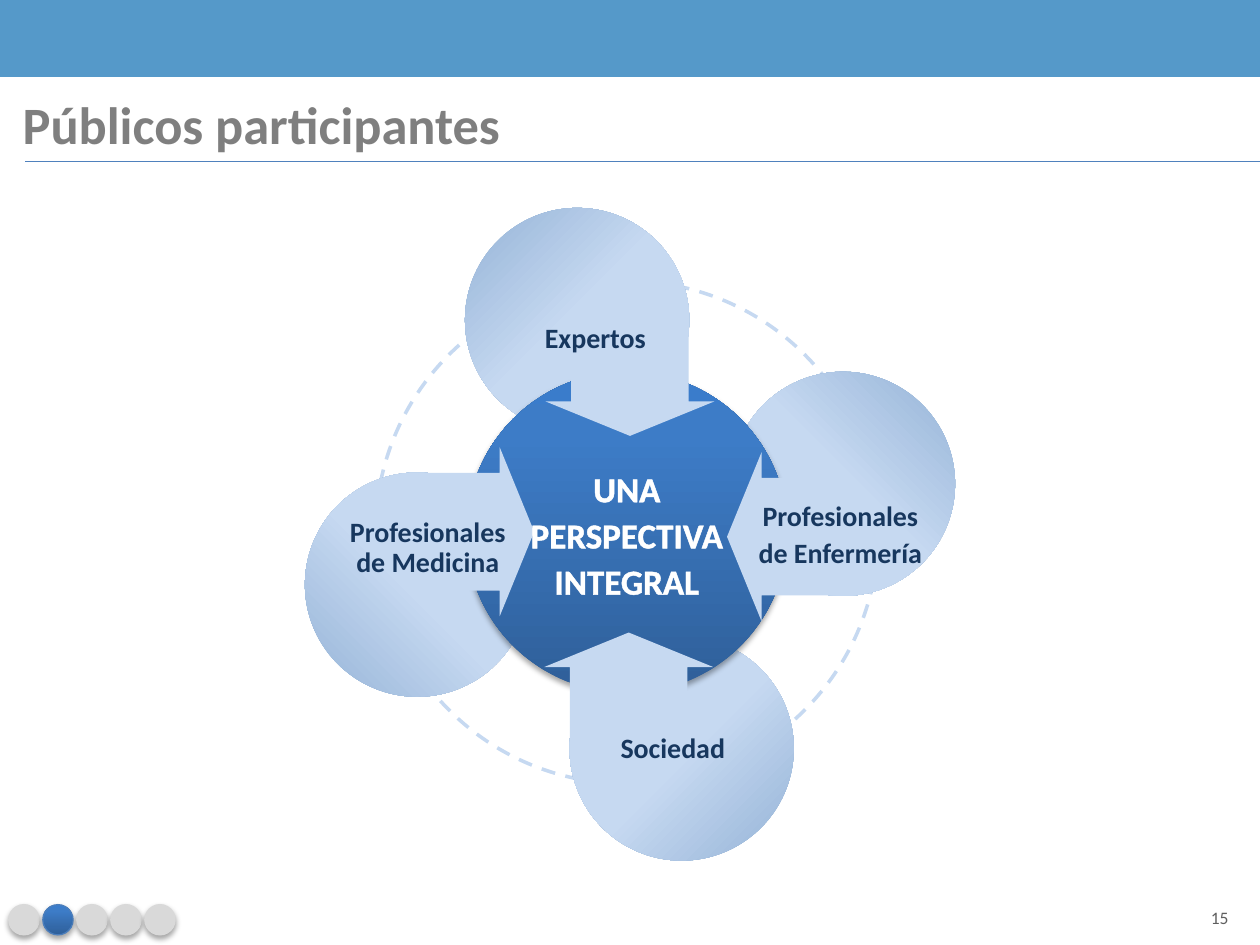
from lxml.etree import SubElement
from pptx import Presentation
from pptx.dml.color import RGBColor
from pptx.enum.dml import MSO_LINE
from pptx.enum.shapes import MSO_CONNECTOR, MSO_SHAPE
from pptx.enum.text import MSO_ANCHOR, PP_ALIGN
from pptx.oxml.ns import qn
from pptx.util import Inches, Pt

WHITE = RGBColor(0xFF, 0xFF, 0xFF)
BANNER_BLUE = RGBColor(0x55, 0x99, 0xC9)
RULE_BLUE = RGBColor(0x4F, 0x81, 0xBD)
DOT_BLUE = RGBColor(0x4B, 0x7E, 0xBC)
PALE_BLUE = RGBColor(0xC6, 0xD9, 0xF1)
MID_BLUE = RGBColor(0x95, 0xB3, 0xD7)
NAVY = RGBColor(0x17, 0x37, 0x5E)
TITLE_GRAY = RGBColor(0x7F, 0x7F, 0x7F)
NUMBER_GRAY = RGBColor(0x5F, 0x5F, 0x5F)
DOT_GRAY = RGBColor(0xD9, 0xD9, 0xD9)
DEEP_GRADIENT = (270, [(0, RGBColor(0x2F, 0x5F, 0x99)), (80, RGBColor(0x3D, 0x7C, 0xC7)),
                       (100, RGBColor(0x3A, 0x7C, 0xCB))])
PETAL_GRADIENT = (45, [(0, MID_BLUE), (48, PALE_BLUE), (100, PALE_BLUE)])


class SlideBuilder:
    """Draws styled elements on one slide."""

    font_name = "Calibri"

    def __init__(self, slide):
        self.slide = slide

    def style_paragraph(self, paragraph, size, color, bold=False):
        paragraph.font.name = self.font_name
        paragraph.font.size = Pt(size)
        paragraph.font.bold = bold
        paragraph.font.color.rgb = color

    def title(self, text, left, top, width, height):
        shape = self.slide.shapes.title
        shape.left, shape.top = Inches(left), Inches(top)
        shape.width, shape.height = Inches(width), Inches(height)
        frame = shape.text_frame
        frame.text = text
        frame.vertical_anchor = MSO_ANCHOR.TOP
        frame.margin_left = frame.margin_right = Inches(0.12)
        frame.margin_top = frame.margin_bottom = Inches(0.12)
        paragraph = frame.paragraphs[0]
        paragraph.alignment = PP_ALIGN.LEFT
        paragraph.space_after = Pt(6)
        self.style_paragraph(paragraph, 30, TITLE_GRAY, True)

    def text(self, text, left, top, width, height, size, color, bold=True,
             spacing=1.1, wrap=False, outline=None):
        box = self.slide.shapes.add_textbox(
            Inches(left), Inches(top), Inches(width), Inches(height))
        frame = box.text_frame
        frame.word_wrap = wrap
        frame.vertical_anchor = MSO_ANCHOR.MIDDLE
        paragraph = frame.paragraphs[0]
        paragraph.text = text
        paragraph.alignment = PP_ALIGN.CENTER
        paragraph.line_spacing = spacing
        self.style_paragraph(paragraph, size, color, bold)
        if outline is not None:
            properties = paragraph.runs[0]._r.get_or_add_rPr()
            line = SubElement(properties, qn("a:ln"), w=str(Pt(0.75)))
            fill = SubElement(line, qn("a:solidFill"))
            SubElement(fill, qn("a:srgbClr"), val=str(outline))

    def shape(self, kind, left, top, width, height, fill, line=None, line_width=0.75,
              dash=None, rotation=0, shadow=False):
        shape = self.slide.shapes.add_shape(
            kind, Inches(left), Inches(top), Inches(width), Inches(height))
        shape.rotation = rotation
        if isinstance(fill, RGBColor):
            shape.fill.solid()
            shape.fill.fore_color.rgb = fill
        else:
            self.gradient(shape, *fill)
        if line is None:
            shape.line.fill.background()
        else:
            shape.line.color.rgb = line
            shape.line.width = Pt(line_width)
            shape.line.dash_style = dash
        shape.shadow.inherit = False
        if shadow:
            self.drop_shadow(shape)
        return shape

    def gradient(self, shape, angle, stops):
        shape.fill.gradient()
        gradient = shape._element.spPr.find(qn("a:gradFill"))
        gradient.clear()
        gradient.set("rotWithShape", "1")
        stop_list = SubElement(gradient, qn("a:gsLst"))
        for position, color in stops:
            stop = SubElement(stop_list, qn("a:gs"), pos=str(position * 1000))
            SubElement(stop, qn("a:srgbClr"), val=str(color))
        SubElement(gradient, qn("a:lin"), ang=str(angle * 60000), scaled="0")

    def drop_shadow(self, shape):
        effects = shape._element.spPr.find(qn("a:effectLst"))
        outer = SubElement(effects, qn("a:outerShdw"), blurRad=str(Pt(3.1)),
                           dist=str(Pt(1.8)), dir="5400000", rotWithShape="0")
        color = SubElement(outer, qn("a:srgbClr"), val="000000")
        SubElement(color, qn("a:alpha"), val="35000")

    def arrow(self, left, top, rotation):
        arrow = self.shape(MSO_SHAPE.DOWN_ARROW, left, top, 1.34, 0.9, PALE_BLUE,
                           rotation=rotation)
        arrow.adjustments[0] = 0.696
        arrow.adjustments[1] = 0.304

    def rule(self, left, right, top):
        connector = self.slide.shapes.add_connector(
            MSO_CONNECTOR.STRAIGHT, Inches(left), Inches(top), Inches(right), Inches(top))
        connector.line.color.rgb = RULE_BLUE
        connector.line.width = Pt(0.75)
        SubElement(connector._element.spPr, qn("a:effectLst"))


def main():
    presentation = Presentation()
    presentation.slide_width, presentation.slide_height = Inches(10), Inches(7.5)
    builder = SlideBuilder(presentation.slides.add_slide(presentation.slide_layouts[5]))

    builder.shape(MSO_SHAPE.RECTANGLE, 0, 0, 10, 0.61, BANNER_BLUE)
    builder.text("15", 9.43, 7.12, 0.5, 0.33, 10, NUMBER_GRAY, bold=False, spacing=1.0, wrap=True)
    builder.title("Públicos participantes", 0.06, 0.61, 9.88, 0.74)

    current_section = 1
    for index in range(5):
        active = index == current_section
        builder.shape(MSO_SHAPE.OVAL, 0.07 + 0.27 * index, 7.18, 0.24, 0.24,
                      DEEP_GRADIENT if active else DOT_GRAY,
                      line=DOT_BLUE if active else DOT_GRAY, shadow=True)

    builder.shape(MSO_SHAPE.OVAL, 2.98, 2.23, 3.99, 3.99, WHITE, line=PALE_BLUE,
                  line_width=2, dash=MSO_LINE.DASH)
    for left, top, rotation in [(2.42, 3.75, 270), (3.69, 1.65, 0),
                                (4.52, 5.05, 180), (5.8, 2.95, 90)]:
        builder.shape(MSO_SHAPE.OVAL, left, top, 1.78, 1.78, PETAL_GRADIENT, rotation=rotation)
    builder.shape(MSO_SHAPE.OVAL, 3.7, 2.95, 2.55, 2.55, DEEP_GRADIENT, shadow=True)
    for left, top, rotation in [(4.33, 2.56, 0), (5.55, 3.81, 90),
                                (4.32, 5.02, 180), (3.12, 3.77, 270)]:
        builder.arrow(left, top, rotation)

    builder.text("UNA PERSPECTIVA INTEGRAL", 4.1, 3.63, 1.75, 1.19, 20, WHITE,
                 wrap=True, outline=WHITE)
    for label, left, top, width, height, spacing in [
        ("Expertos", 4.22, 2.47, 1.01, 0.38, 1.1),
        ("Profesionales\vde Enfermería", 5.91, 3.88, 1.52, 0.68, 1.1),
        ("Sociedad", 4.82, 5.73, 1.04, 0.38, 1.1),
        ("Profesionales\vde Medicina", 2.67, 4.06, 1.45, 0.59, 0.9),
    ]:
        builder.text(label, left, top, width, height, 16, NAVY, spacing=spacing)
    builder.rule(0.2, 10, 1.28)

    presentation.save("out.pptx")


if __name__ == "__main__":
    main()
